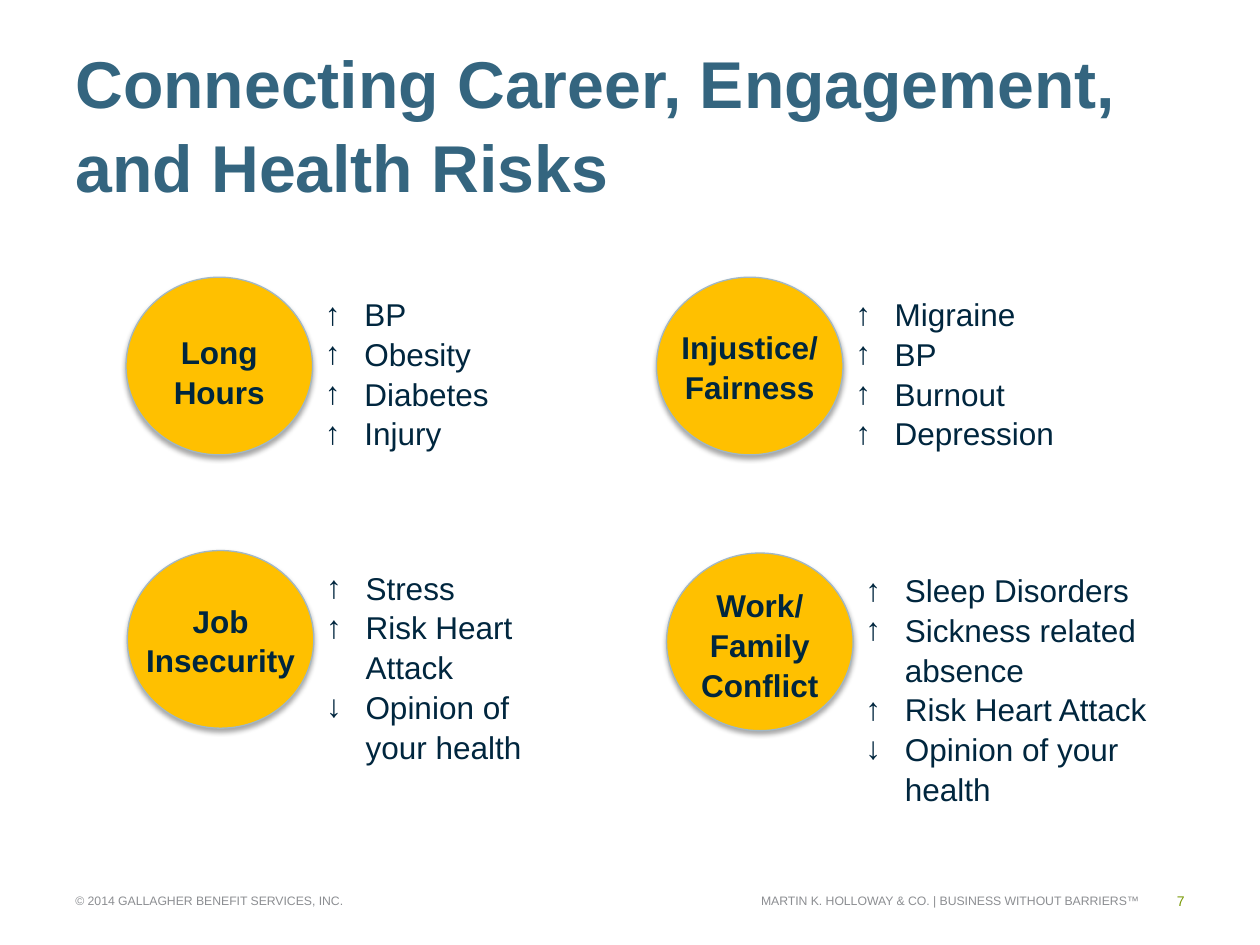
import pptx
import pptx.dml.color
import pptx.enum.shapes
import pptx.enum.text
import pptx.oxml
import pptx.util
from pptx.oxml.ns import nsdecls

Pt = pptx.util.Pt
ALIGN = pptx.enum.text.PP_ALIGN
ANCHOR = pptx.enum.text.MSO_ANCHOR

FONT = "Arial"
NAVY, TEAL, GOLD, GREY, GREEN = "00263E", "34657F", "FFC000", "8C8E92", "799A05"
CIRCLE_W, CIRCLE_H = 106.6, 101.5
LIST_DROP = 5.8
INDENT = 22.5

# left, top, label, label drop, label height, list width, list height, effects
RISKS = [
    (72, 158.4, "Long Hours", 27.4, 51, 147, 94,
     ["↑BP", "↑Obesity", "↑Diabetes", "↑Injury"]),
    (72.7, 314.6, "Job Insecurity", 24.5, 51, 157.7, 116.6,
     ["↑Stress", "↑Risk Heart Attack", "↓Opinion of your health"]),
    (375.1, 158.4, "Injustice/ Fairness", 24.5, 51, 147, 94,
     ["↑Migraine", "↑BP", "↑Burnout", "↑Depression"]),
    (380.9, 316, "Work/\vFamily Conflict", 14.4, 72.7, 211.7, 138.2,
     ["↑Sleep Disorders", "↑Sickness related absence", "↑Risk Heart Attack",
      "↓Opinion of your health"]),
]


def rgb(value):
    return pptx.dml.color.RGBColor.from_string(value)


def add_bullet(p, char):
    pPr = p._p.get_or_add_pPr()
    pPr.set("marL", str(Pt(INDENT)))
    pPr.set("indent", str(-Pt(INDENT)))
    for xml in (f'<a:buFont {nsdecls("a")} typeface="{FONT}"/>',
                f'<a:buChar {nsdecls("a")} char="{char}"/>'):
        pPr.append(pptx.oxml.parse_xml(xml))


def add_text(s, text, left, top, width, height, size=18, color=NAVY, bold=False,
             align=ALIGN.LEFT, anchor=ANCHOR.TOP, spacing=1.05, bulleted=False):
    """Add a text box; each line is a paragraph, led by its bullet if bulleted."""
    box = s.shapes.add_textbox(Pt(left), Pt(top), Pt(width), Pt(height))
    tf = box.text_frame
    tf.word_wrap = True
    tf.vertical_anchor = anchor
    for i, line in enumerate(text.split("\n")):
        p = tf.add_paragraph() if i else tf.paragraphs[0]
        p.alignment = align
        p.line_spacing = spacing
        if bulleted:
            add_bullet(p, line[0])
            line = line[1:]
        p.text = line
        for r in p.runs:
            r.font.name = FONT
            r.font.size = Pt(size)
            r.font.bold = bold
            r.font.color.rgb = rgb(color)


def add_circle(s, left, top):
    sp = s.shapes.add_shape(pptx.enum.shapes.MSO_SHAPE.OVAL, Pt(left), Pt(top),
                            Pt(CIRCLE_W), Pt(CIRCLE_H))
    sp.fill.solid()
    sp.fill.fore_color.rgb = rgb(GOLD)
    sp.line.color.rgb = rgb("A1B7C5")
    sp.line.width = Pt(0.75)
    sp._element.spPr.append(pptx.oxml.parse_xml(
        f'<a:effectLst {nsdecls("a")}>'
        f'<a:outerShdw blurRad="{Pt(3.1)}" dist="{Pt(1.8)}" dir="5400000" rotWithShape="0">'
        '<a:srgbClr val="000000"><a:alpha val="35000"/></a:srgbClr>'
        '</a:outerShdw></a:effectLst>'))


def add_risk(s, left, top, label, label_drop, label_h, list_w, list_h, effects):
    """Add a circle with its label, and the list of health effects beside it."""
    add_circle(s, left, top)
    add_text(s, label, left, top + label_drop, CIRCLE_W, label_h,
             bold=True, align=ALIGN.CENTER)
    add_text(s, "\n".join(effects), left + CIRCLE_W, top + LIST_DROP, list_w, list_h,
             bulleted=True)


def add_footer(s, text, left, width, size=7, color=GREY, align=ALIGN.RIGHT):
    add_text(s, text, left, 500.4, width, 28.8, size=size, color=color, align=align,
             anchor=ANCHOR.MIDDLE, spacing=1.0)


def main():
    prs = pptx.Presentation()
    prs.slide_width, prs.slide_height = Pt(720), Pt(540)
    s = prs.slides.add_slide(prs.slide_layouts[6])

    add_text(s, "Connecting Career, Engagement, and Health Risks", 36, 41.8, 641.5, 79.2,
             size=37.8, color=TEAL, bold=True, anchor=ANCHOR.BOTTOM)
    for risk in RISKS:
        add_risk(s, *risk)

    add_footer(s, "© 2014 GALLAGHER BENEFIT SERVICES, INC.", 36, 326, align=ALIGN.LEFT)
    add_footer(s, "MARTIN K. HOLLOWAY & CO. | BUSINESS WITHOUT BARRIERS™", 362, 296)
    add_footer(s, "7", 658.8, 25.2, size=8, color=GREEN)
    prs.save("out.pptx")


if __name__ == "__main__":
    main()
